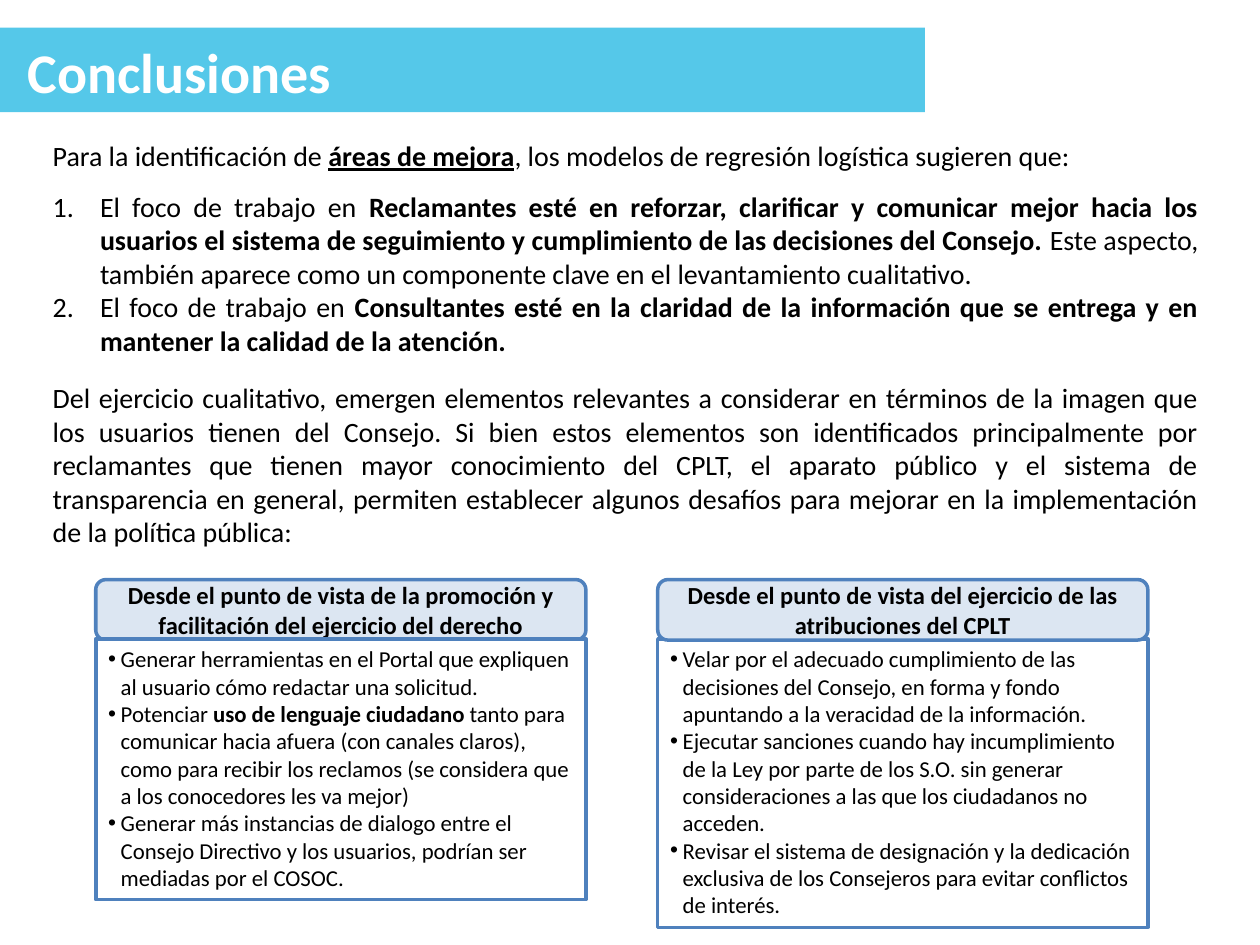
from lxml import etree
from pptx import Presentation
from pptx import util as u
from pptx.dml.color import RGBColor
from pptx.enum import shapes, text
from pptx.oxml import ns

prs = Presentation()
prs.slide_width, prs.slide_height = u.Inches(10), u.Inches(7.5)
s = prs.slides.add_slide(prs.slide_layouts[6])
col, row = prs.slide_width / 100, prs.slide_height / 75

RECT = shapes.MSO_SHAPE.RECTANGLE
ROUND = shapes.MSO_SHAPE.ROUNDED_RECTANGLE
LEFT, CENTER, JUSTIFY = text.PP_ALIGN.LEFT, text.PP_ALIGN.CENTER, text.PP_ALIGN.JUSTIFY
FIT = text.MSO_AUTO_SIZE.SHAPE_TO_FIT_TEXT


def rgb(value):
    return RGBColor.from_string(value)


def write(tf, paragraphs, size, align, color="000000"):
    for i, (marker, indent, before, runs) in enumerate(paragraphs):
        p = tf.paragraphs[0] if i == 0 else tf.add_paragraph()
        p.alignment = align
        if marker:
            pPr = p._p.get_or_add_pPr()
            pPr.set("marL", str(int(indent * col)))
            pPr.set("indent", str(int(-indent * col)))
            if marker == "1.":
                etree.SubElement(pPr, ns.qn("a:buFont"), typeface="+mj-lt")
                etree.SubElement(pPr, ns.qn("a:buAutoNum"), type="arabicPeriod")
            else:
                etree.SubElement(pPr, ns.qn("a:buFont"), typeface="Arial")
                etree.SubElement(pPr, ns.qn("a:buChar"), char=marker)
        if before:
            p.space_before = u.Pt(before)
        for words, style in runs:
            r = p.add_run()
            r.text = words
            r.font.name = "Calibri"
            r.font.size = u.Pt(size)
            r.font.bold = "b" in style
            r.font.underline = "u" in style
            r.font.color.rgb = rgb(color)


title = [("", 0, 0, [("Conclusiones", "b")])]
body = [
    ("", 0, 0, [
        ("Para la identificación de ", ""),
        ("áreas de mejora", "bu"),
        (", los modelos de regresión logística sugieren que:", ""),
    ]),
    ("1.", 3.75, 9.8, [
        ("El foco de trabajo en ", ""),
        ("Reclamantes esté en reforzar, clarificar y comunicar mejor hacia los usuarios el sistema "
         "de seguimiento y cumplimiento de las decisiones del Consejo. ", "b"),
        ("Este aspecto, también aparece como un componente clave en el levantamiento cualitativo.", ""),
    ]),
    ("1.", 3.75, 0, [
        ("El foco de trabajo en ", ""),
        ("Consultantes esté en la claridad de la información que se entrega y en mantener la calidad "
         "de la atención. ", "b"),
    ]),
    ("", 0, 13.4, [
        ("Del ejercicio cualitativo, emergen elementos relevantes a considerar en términos de la imagen "
         "que los usuarios tienen del Consejo. Si bien estos elementos son identificados principalmente "
         "por reclamantes que tienen mayor conocimiento del CPLT, el aparato público y el sistema de "
         "transparencia en general, permiten establecer algunos desafíos para mejorar en la "
         "implementación de la política pública:", ""),
    ]),
]
promotion = [
    [("Generar herramientas en el Portal que expliquen al usuario cómo redactar una solicitud.", "")],
    [("Potenciar ", ""),
     ("uso de lenguaje ciudadano ", "b"),
     ("tanto para comunicar hacia afuera (con canales claros), como para recibir los reclamos "
      "(se considera que a los conocedores les va mejor)", "")],
    [("Generar más instancias de dialogo entre el Consejo Directivo y los usuarios, podrían ser "
      "mediadas por el COSOC.", "")],
]
powers = [
    [("Velar por el adecuado cumplimiento de las decisiones del Consejo, en forma y fondo apuntando "
      "a la veracidad de la información.", "")],
    [("Ejecutar sanciones cuando hay incumplimiento de la Ley por parte de los S.O. sin generar "
      "consideraciones a las que los ciudadanos no acceden.", "")],
    [("Revisar el sistema de designación y la dedicación exclusiva de los Consejeros para evitar "
      "conflictos de interés.", "")],
]

sp = s.shapes.add_shape(RECT, 0, int(2.2 * row), int(73.4 * col), int(6.7 * row))
sp.shadow.inherit = False
sp.fill.solid()
sp.fill.fore_color.rgb = rgb("55C8E9")
sp.line.fill.background()

for x, y, w, h, wrap, paragraphs, size, align, color in [
    (1.2, 2.5, 26.4, 6.4, False, title, 32, LEFT, "FFFFFF"),
    (3.2, 10.5, 92.9, 35.2, True, body, 16, JUSTIFY, "000000"),
]:
    tf = s.shapes.add_textbox(int(x * col), int(y * row), int(w * col), int(h * row)).text_frame
    tf.word_wrap = wrap
    tf.auto_size = FIT
    write(tf, paragraphs, size, align, color)

left, right, head_top, list_top = 7.6, 52.2, 46, 50.7
promotion_head = "Desde el punto de vista de la promoción y facilitación del ejercicio del derecho"
powers_head = "Desde el punto de vista del ejercicio de las atribuciones del CPLT"
for x, h, content in [
    (left, 4.8, promotion_head),
    (left, 20.7, promotion),
    (right, 22.9, powers),
    (right, 4.8, powers_head),
]:
    is_head = isinstance(content, str)
    y = head_top if is_head else list_top
    sp = s.shapes.add_shape(ROUND if is_head else RECT,
                            int(x * col), int(y * row), int(38.9 * col), int(h * row))
    sp.shadow.inherit = False
    sp.fill.solid()
    sp.fill.fore_color.rgb = rgb("DCE6F2" if is_head else "FFFFFF")
    sp.line.color.rgb = rgb("4F81BD")
    sp.line.width = u.Pt(2)
    tf = sp.text_frame
    tf.word_wrap = True
    if is_head:
        tf.vertical_anchor = text.MSO_ANCHOR.MIDDLE
        write(tf, [("", 0, 0, [(content, "b")])], 14, CENTER)
    else:
        tf.vertical_anchor = text.MSO_ANCHOR.TOP
        tf.auto_size = FIT
        write(tf, [("•", 1, 0, runs) for runs in content], 13, LEFT)

prs.save("out.pptx")
